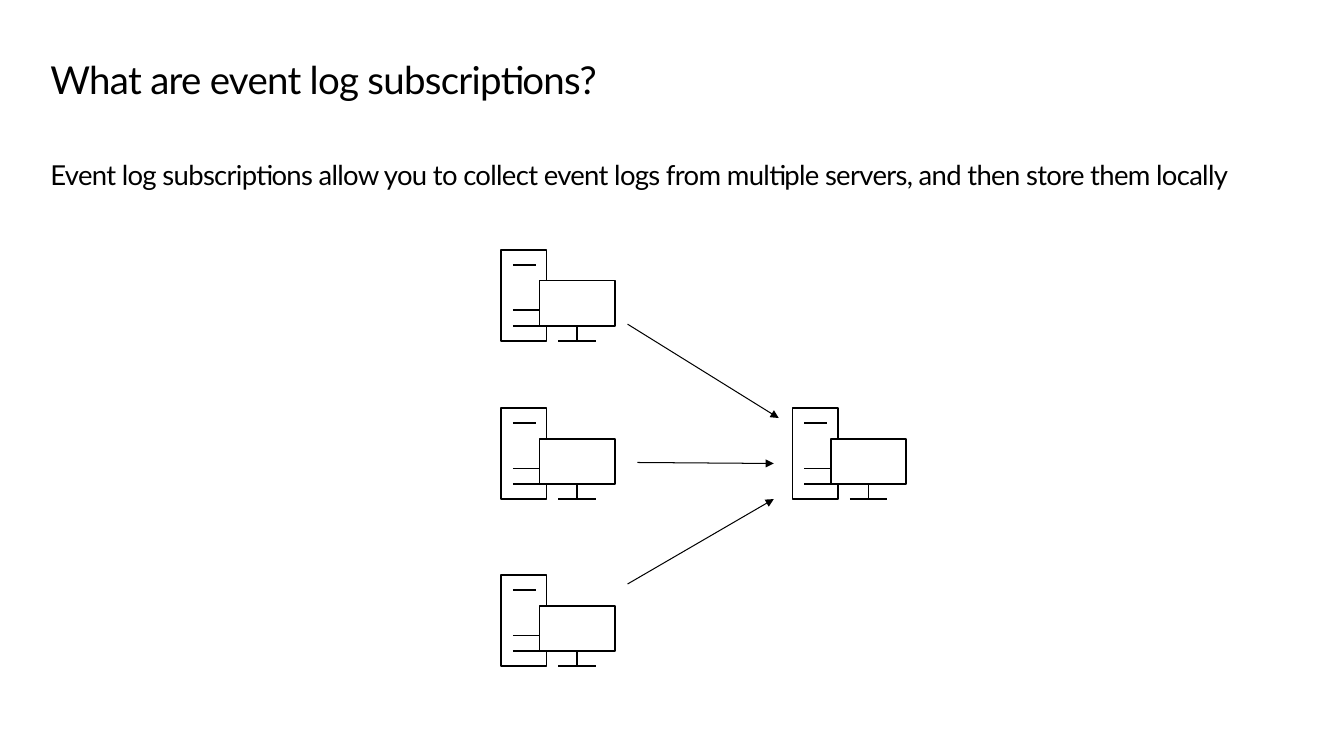
"""Slide showing event logs flowing from three servers to one collector."""
from lxml.etree import SubElement
from pptx import Presentation
from pptx.dml.color import RGBColor
from pptx.enum.shapes import MSO_CONNECTOR
from pptx.enum.text import MSO_ANCHOR, MSO_AUTO_SIZE, PP_ALIGN
from pptx.oxml.ns import qn
from pptx.util import Inches, Pt

BLACK = RGBColor(0x00, 0x00, 0x00)
FONT = "Lato"
UNIT = Inches(0.01)
SERVER_COL, COLLECTOR_COL = 5.07, 8.02
ROWS = [2.53, 4.13, 5.82]

MONITOR = [(39, 31), (115, 31), (115, 77), (39, 77), (39, 31)]
STAND = [(77, 77), (77, 92)]
FOOT = [(58, 92), (96, 92)]
SLOTS = [[(12, 15), (35, 15)], [(12, 77), (39, 77)], [(12, 61), (39, 61)]]
TOWER = [(46, 31), (46, 0), (0, 0), (0, 92), (46, 92), (46, 77)]
STROKES = [STAND, FOOT, *SLOTS, TOWER]

prs = Presentation()
prs.slide_width, prs.slide_height = Inches(13.6), Inches(7.65)
s = prs.slides.add_slide(prs.slide_layouts[1])


def fill_placeholder(sp, top, height, bottom_inset, text, size):
    sp.left, sp.top = Inches(0.51), Inches(top)
    sp.width, sp.height = Inches(12.61), Inches(height)
    tf = sp.text_frame
    tf.word_wrap = True
    tf.auto_size = MSO_AUTO_SIZE.NONE
    tf.vertical_anchor = MSO_ANCHOR.TOP
    tf.margin_left = tf.margin_top = 0
    tf.margin_right, tf.margin_bottom = Inches(0.1), Inches(bottom_inset)
    p = tf.paragraphs[0]
    p.alignment = PP_ALIGN.LEFT
    r = p.add_run()
    r.text = text
    r.font.name, r.font.size = FONT, Pt(size)
    r.font.color.rgb = BLACK
    r.font._element.set("spc", "-50")
    return p


title = fill_placeholder(s.shapes.title, 0.62, 0.45, 0,
                         "What are event log subscriptions?", 28)
title.line_spacing = 0.9

body = fill_placeholder(
    s.placeholders[1], 1.6, 5.56, 0.05,
    "Event log subscriptions allow you to collect event logs from multiple "
    "servers, and then store them locally", 20)
body.space_before = Pt(12)
pPr = body._p.get_or_add_pPr()
pPr.set("marL", "0")
pPr.set("indent", "0")
SubElement(pPr, qn("a:buNone"))

computers = [(SERVER_COL, row) for row in ROWS] + [(COLLECTOR_COL, ROWS[1])]
for left, top in computers:
    outline = s.shapes.build_freeform(*MONITOR[0], scale=UNIT)
    outline.add_line_segments(MONITOR[1:], close=False)
    for start, *rest in STROKES:
        outline.move_to(*start)
        outline.add_line_segments(rest, close=False)
    sp = outline.convert_to_shape(Inches(left), Inches(top))
    sp.shadow.inherit = False
    sp.fill.background()
    sp.line.color.rgb = BLACK
    sp.line.width = Pt(1.25)

ARROWS = [
    (6.35, 3.28, 7.88, 4.23),
    (6.45, 4.68, 7.83, 4.69),
    (6.35, 5.91, 7.83, 5.05),
]
for ends in ARROWS:
    arrow = s.shapes.add_connector(MSO_CONNECTOR.STRAIGHT, *map(Inches, ends))
    arrow.line.color.rgb = BLACK
    arrow.line.width = Pt(0.75)
    SubElement(arrow.line._get_or_add_ln(), qn("a:tailEnd"), type="triangle")
    SubElement(arrow._element.spPr, qn("a:effectLst"))

prs.save("out.pptx")
